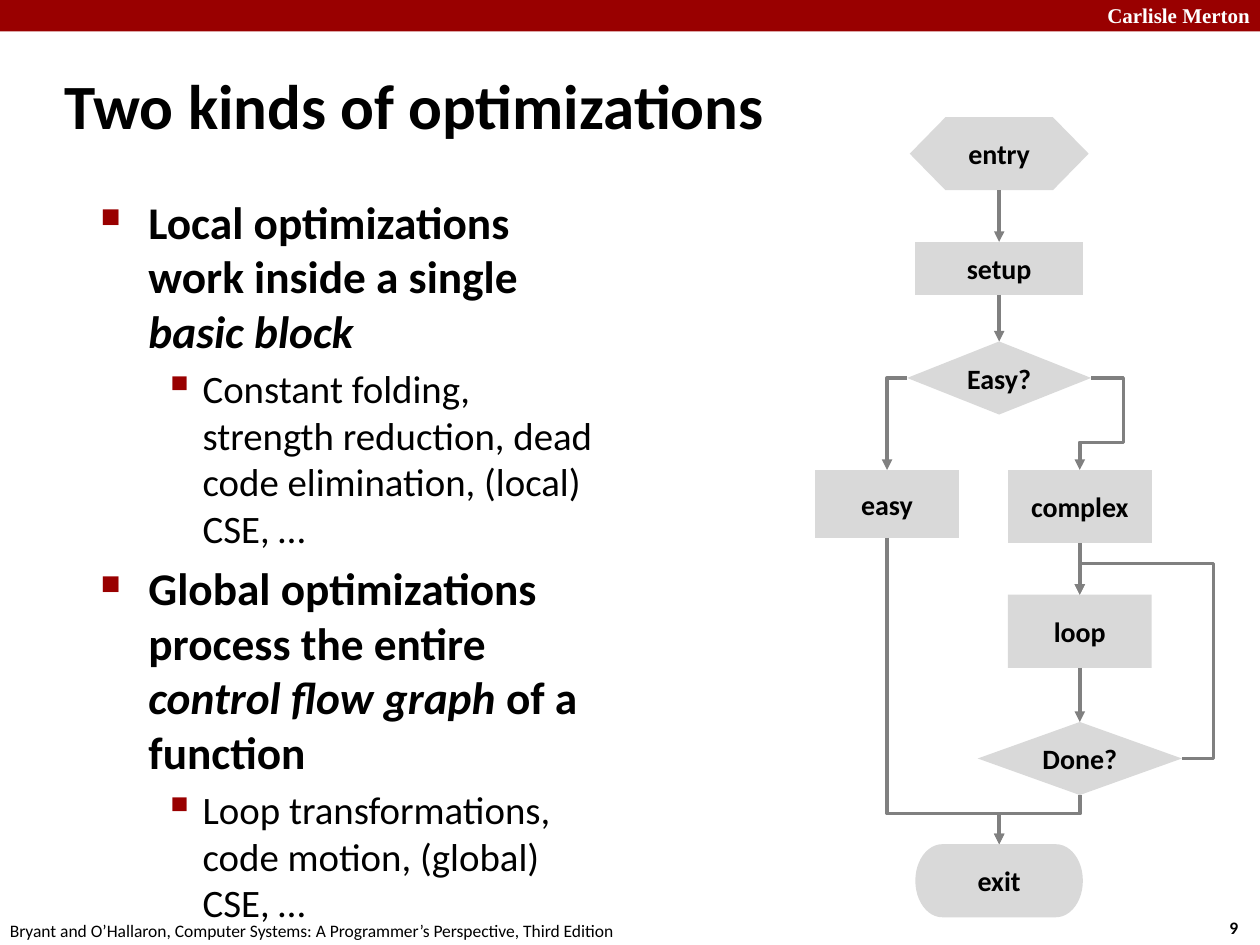
import math

from lxml import etree
from pptx import Presentation
from pptx.dml.color import RGBColor
from pptx.enum import shapes, text
from pptx.oxml import ns
from pptx.util import Inches, Pt

COLORS = {"banner": "990000", "node": "D9D9D9", "arrow": "808080",
          "ink": "000000", "light": "FFFFFF"}
BULLETS = [
    {"mark": "■", "scale": 60, "margin": 0.38, "hang": 0.38, "size": 25.9, "bold": True},
    {"mark": "▪", "scale": 110, "margin": 0.81, "hang": 0.31, "size": 22.2, "bold": False},
]


def color(name):
    return RGBColor.from_string(COLORS[name])


def add_xml(parent, tag, **attributes):
    return etree.SubElement(parent, ns.qn(tag), attributes)


class FlowSlide:
    font = "Calibri"

    def __init__(self, deck):
        self.slide = deck.slides.add_slide(deck.slide_layouts[5])
        self.shapes = self.slide.shapes

    def style(self, paragraph, size, bold=False, ink="ink", font=None):
        paragraph.font.name = font or self.font
        paragraph.font.size = Pt(size)
        paragraph.font.bold = bold
        paragraph.font.color.rgb = color(ink)

    def indent(self, paragraph, margin, hang):
        properties = paragraph._p.get_or_add_pPr()
        properties.set("marL", str(Inches(margin)))
        properties.set("indent", str(-Inches(hang)))
        return properties

    def title(self, words, box):
        heading = self.shapes.title
        heading.left, heading.top, heading.width, heading.height = map(Inches, box)
        heading.text_frame.text = words
        heading.text_frame.vertical_anchor = text.MSO_ANCHOR.MIDDLE
        paragraph = heading.text_frame.paragraphs[0]
        paragraph.alignment = text.PP_ALIGN.LEFT
        self.indent(paragraph, 0.13, 0.13)
        self.style(paragraph, 36, True)

    def label(self, words, box, size, align=text.PP_ALIGN.LEFT, **look):
        frame = self.shapes.add_textbox(*map(Inches, box)).text_frame
        frame.word_wrap = True
        paragraph = frame.paragraphs[0]
        paragraph.text = words
        paragraph.alignment = align
        self.style(paragraph, size, **look)

    def bullets(self, points, box):
        frame = self.shapes.add_textbox(*map(Inches, box)).text_frame
        frame.word_wrap = True
        for index, (level, pieces) in enumerate(points):
            paragraph = frame.add_paragraph() if index else frame.paragraphs[0]
            rule = BULLETS[level]
            paragraph.level = level
            paragraph.space_before = Pt(round(rule["size"] * 0.2, 1))
            properties = self.indent(paragraph, rule["margin"], rule["hang"])
            tint = add_xml(properties, "a:buClr")
            add_xml(tint, "a:srgbClr", val=COLORS["banner"])
            add_xml(properties, "a:buSzPct", val=str(rule["scale"] * 1000))
            add_xml(properties, "a:buChar", char=rule["mark"])
            self.style(paragraph, rule["size"], rule["bold"])
            for words, italic in pieces:
                run = paragraph.add_run()
                run.text = words
                if italic:
                    run.font.italic = True

    def block(self, kind, box, fill, words=""):
        block = self.shapes.add_shape(kind, *map(Inches, box))
        block.shadow.inherit = False
        block.fill.solid()
        block.fill.fore_color.rgb = color(fill)
        block.line.fill.background()
        if words:
            block.text_frame.vertical_anchor = text.MSO_ANCHOR.MIDDLE
            paragraph = block.text_frame.paragraphs[0]
            paragraph.text = words
            paragraph.alignment = text.PP_ALIGN.CENTER
            self.style(paragraph, 16, True)

    def arrow(self, start, end, preset="line", turn=0, adjust=()):
        middle = [(a + b) / 2 for a, b in zip(start, end)]
        cos, sin = math.cos(math.radians(turn)), math.sin(math.radians(turn))
        ends = []
        for x, y in (start, end):
            dx, dy = x - middle[0], y - middle[1]
            ends += [middle[0] + dx * cos + dy * sin, middle[1] - dx * sin + dy * cos]
        arrow = self.shapes.add_connector(shapes.MSO_CONNECTOR.STRAIGHT, *map(Inches, ends))
        arrow.line.color.rgb = color("arrow")
        arrow.line.width = Pt(2)
        properties = arrow._element.spPr
        add_xml(arrow.line._get_or_add_ln(), "a:tailEnd", type="triangle")
        add_xml(properties, "a:effectLst")
        if turn:
            properties.find(ns.qn("a:xfrm")).set("rot", str(turn * 60000))
        geometry = properties.find(ns.qn("a:prstGeom"))
        geometry.set("prst", preset)
        guides = geometry.find(ns.qn("a:avLst"))
        for number, value in enumerate(adjust, 1):
            name = "adj" if preset == "bentConnector2" else f"adj{number}"
            add_xml(guides, "a:gd", name=name, fmla=f"val {round(value * 100000)}")


def main():
    deck = Presentation()
    deck.slide_width, deck.slide_height = Inches(10), Inches(7.5)
    page = FlowSlide(deck)
    kinds = shapes.MSO_SHAPE

    page.block(kinds.RECTANGLE, (0, 0, 10, 0.25), "banner")
    page.label("Carlisle Merton", (8.59, -0.03, 1.43, 0.3), 12, text.PP_ALIGN.RIGHT,
               bold=True, ink="light", font="Times New Roman")
    page.label("9", (9.66, 7.23, 0.37, 0.27), 10, bold=True)
    page.label("Bryant and O’Hallaron, Computer Systems: A Programmer’s Perspective, "
               "Third Edition", (-0.02, 7.25, 5.08, 0.27), 10)
    page.title("Two kinds of optimizations", (0.41, 0.41, 8.3, 0.83))
    page.bullets([
        (0, [("Local optimizations work inside a single ", False), ("basic block", True)]),
        (1, [("Constant folding, strength reduction, dead code elimination, "
              "(local) CSE, …", False)]),
        (0, [("Global optimizations process the entire ", False),
             ("control flow graph", True), (" of a function", False)]),
        (1, [("Loop transformations, code motion, (global) CSE, …", False)]),
    ], (0.7, 1.49, 4.23, 5.44))

    trunk, easy, hard = 7.93, 7.04, 8.57
    nodes = [
        ("entry", kinds.FLOWCHART_PREPARATION, trunk, 0.93, 1.42, 0.58),
        ("setup", kinds.FLOWCHART_PROCESS, trunk, 1.92, 1.33, 0.42),
        ("Easy?", kinds.FLOWCHART_DECISION, trunk, 2.71, 1.46, 0.58),
        ("easy", kinds.FLOWCHART_PROCESS, easy, 3.73, 1.14, 0.54),
        ("complex", kinds.FLOWCHART_PROCESS, hard, 3.73, 1.14, 0.58),
        ("loop", kinds.RECTANGLE, hard, 4.72, 1.14, 0.58),
        ("Done?", kinds.FLOWCHART_DECISION, hard, 5.73, 1.62, 0.58),
        ("exit", kinds.FLOWCHART_TERMINATOR, trunk, 6.7, 1.33, 0.58),
    ]
    top, bottom, left, right = {}, {}, {}, {}
    for name, kind, center, y, width, height in nodes:
        page.block(kind, (center - width / 2, y, width, height), "node", name)
        top[name], bottom[name] = (center, y), (center, y + height)
        left[name] = (center - width / 2, y + height / 2)
        right[name] = (center + width / 2, y + height / 2)

    for source, target in [("entry", "setup"), ("setup", "Easy?"),
                           ("complex", "loop"), ("loop", "Done?")]:
        page.arrow(bottom[source], top[target])
    page.arrow(left["Easy?"], top["easy"], "bentConnector2", 180)
    page.arrow(right["Easy?"], top["complex"], "bentConnector4", 0, (-2.83, 0.7))
    page.arrow(bottom["easy"], top["exit"], "bentConnector3", 270, (0.9,))
    page.arrow(bottom["Done?"], top["exit"], "bentConnector3", 90, (0.38,))
    page.arrow(right["Done?"], top["loop"], "bentConnector4", 0, (-0.31, 1.19))

    deck.save("out.pptx")


if __name__ == "__main__":
    main()
